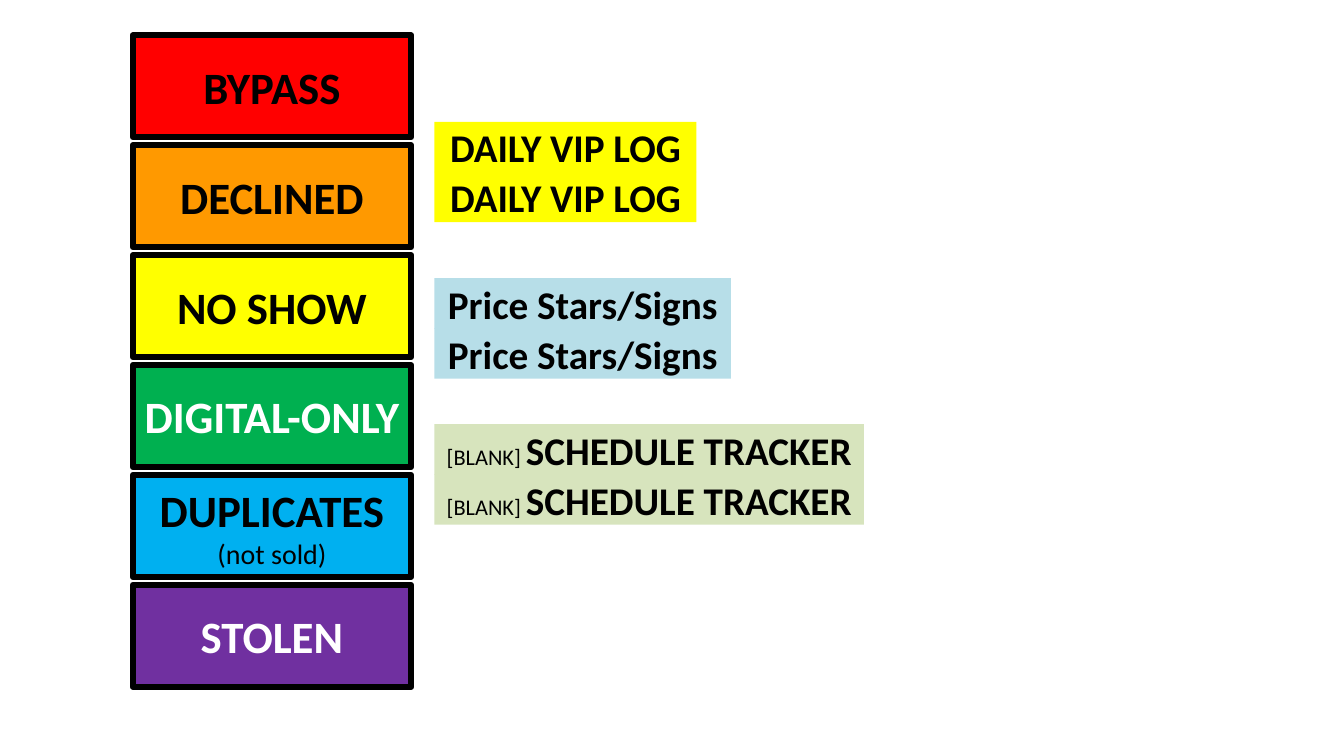
import pptx
import pptx.dml.color
import pptx.enum.shapes
import pptx.enum.text
import pptx.util
from pptx.dml.color import RGBColor
from pptx.util import Cm

BLACK = RGBColor(0x00, 0x00, 0x00)
WHITE = RGBColor(0xFF, 0xFF, 0xFF)
RED = RGBColor(0xFF, 0x00, 0x00)
ORANGE = RGBColor(0xFF, 0x99, 0x00)
YELLOW = RGBColor(0xFF, 0xFF, 0x00)
GREEN = RGBColor(0x00, 0xB0, 0x50)
BLUE = RGBColor(0x00, 0xB0, 0xF0)
PURPLE = RGBColor(0x70, 0x30, 0xA0)
PALE_BLUE = RGBColor(0xB7, 0xDE, 0xE8)
PALE_GREEN = RGBColor(0xD7, 0xE4, 0xBD)


def add_label(left, top, width, height, fill_color, text_color, lines):
    """Add a filled label; each line is a list of (text, size, bold) runs."""
    shape = slide.shapes.add_shape(
        pptx.enum.shapes.MSO_SHAPE.ROUNDED_RECTANGLE,
        Cm(left), Cm(top), Cm(width), Cm(height))
    shape.adjustments[0] = 0
    shape.shadow.inherit = False
    shape.fill.solid()
    shape.fill.fore_color.rgb = fill_color
    shape.line.fill.background()
    frame = shape.text_frame
    frame.word_wrap = True
    frame.vertical_anchor = pptx.enum.text.MSO_ANCHOR.MIDDLE
    frame.margin_left = frame.margin_right = 0
    frame.margin_top = frame.margin_bottom = 0
    for index, runs in enumerate(lines):
        paragraph = frame.add_paragraph() if index else frame.paragraphs[0]
        paragraph.alignment = pptx.enum.text.PP_ALIGN.CENTER
        for text, size, bold in runs:
            run = paragraph.add_run()
            run.text = text
            run.font.name = "Calibri"
            run.font.size = pptx.util.Pt(size)
            run.font.bold = bold
            run.font.color.rgb = text_color
    return shape


presentation = pptx.Presentation()
presentation.slide_width = Cm(33.87)
presentation.slide_height = Cm(19.05)
BLANK_LAYOUT = 6
slide = presentation.slides.add_slide(presentation.slide_layouts[BLANK_LAYOUT])

# Status labels: name, note, fill, text colour
statuses = [
    ("BYPASS", None, RED, BLACK),
    ("DECLINED", None, ORANGE, BLACK),
    ("NO SHOW", None, YELLOW, BLACK),
    ("DIGITAL-ONLY", None, GREEN, WHITE),
    ("DUPLICATES", "(not sold)", BLUE, BLACK),
    ("STOLEN", None, PURPLE, WHITE),
]
STATUS_TOP, STATUS_PITCH = 0.89, 2.77
for row, (name, note, fill_color, text_color) in enumerate(statuses):
    lines = [[(name, 32, True)]]
    if note:
        lines.append([(note, 20, False)])
    status = add_label(3.35, STATUS_TOP + row * STATUS_PITCH, 7.01, 2.57,
                       fill_color, text_color, lines)
    status.line.color.rgb = BLACK
    status.line.width = pptx.util.Pt(4.5)

# Binder labels, each shown twice: top, width, fill, runs
binders = [
    (3.07, 6.6, YELLOW, [("DAILY VIP LOG", 28, True)]),
    (7.01, 7.47, PALE_BLUE, [("Price Stars/Signs", 28, True)]),
    (10.69, 10.82, PALE_GREEN,
     [("[BLANK] ", 16, False), ("SCHEDULE TRACKER", 28, True)]),
]
BINDER_HEIGHT, BINDER_PITCH = 1.27, 1.26
for top, width, fill_color, runs in binders:
    for row in range(2):
        add_label(10.95, top + row * BINDER_PITCH, width, BINDER_HEIGHT,
                  fill_color, BLACK, [runs])

presentation.save("out.pptx")
